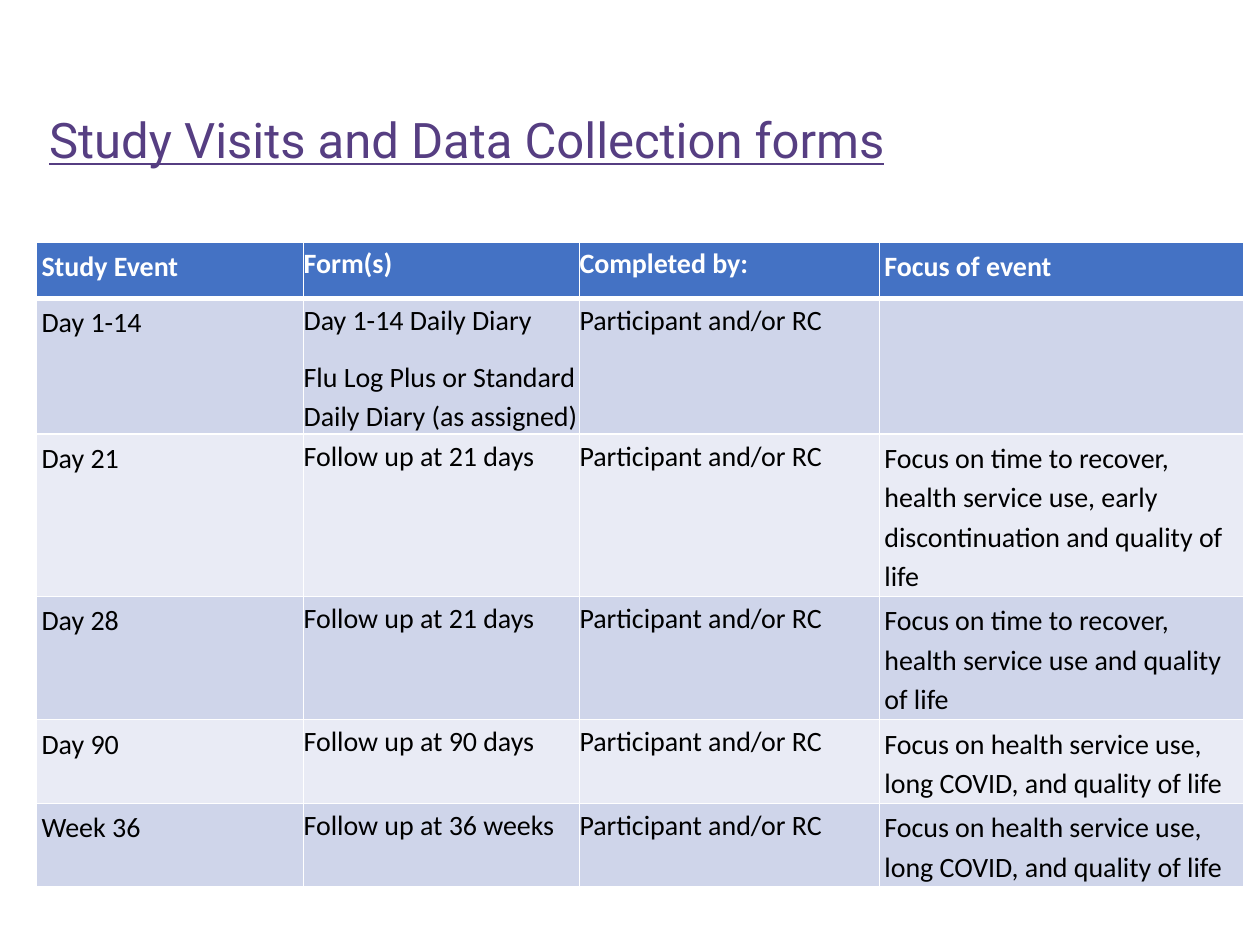
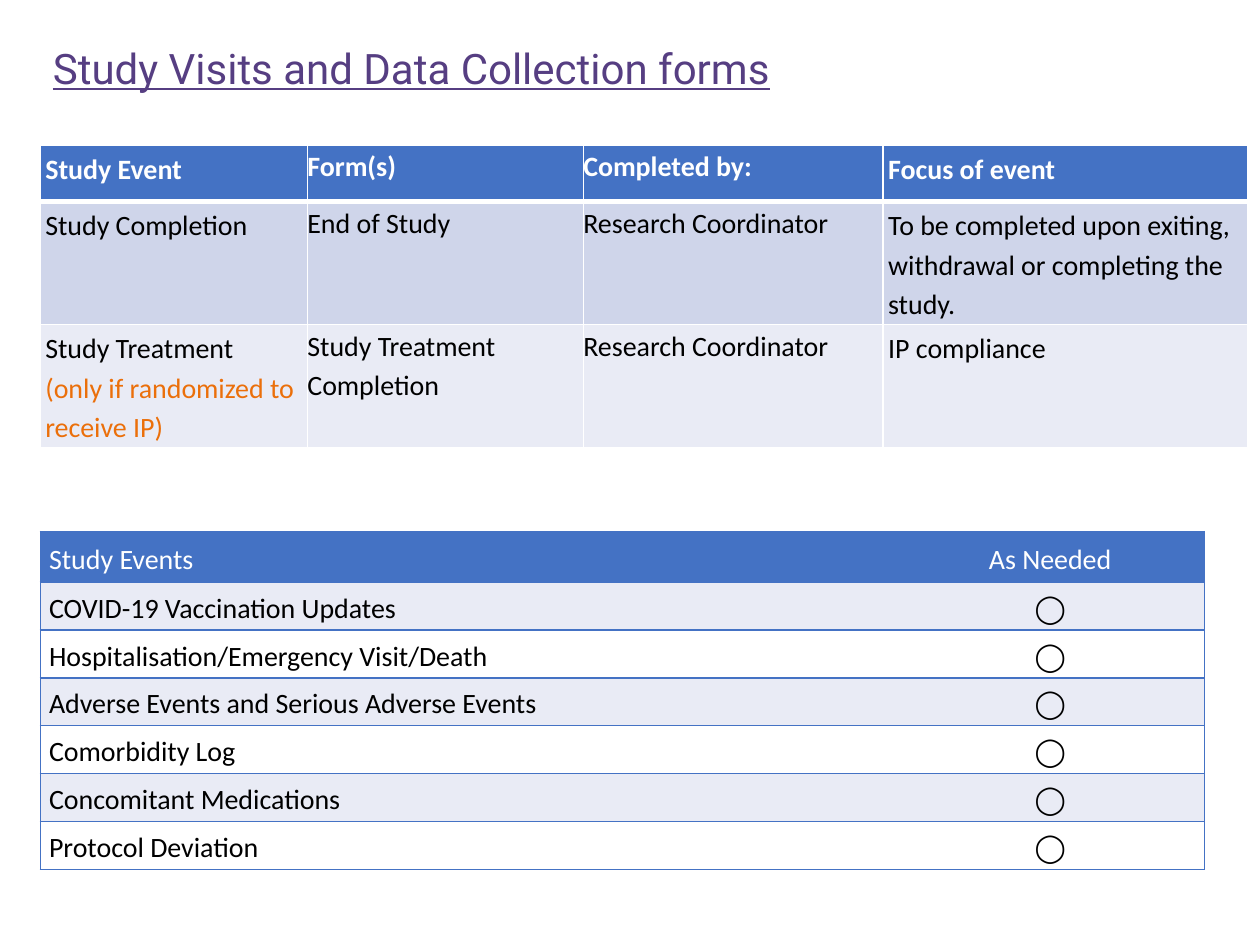
from dataclasses import dataclass

from lxml.etree import SubElement
from pptx import Presentation
from pptx.dml.color import RGBColor
from pptx.enum.text import MSO_ANCHOR, MSO_AUTO_SIZE, PP_ALIGN
from pptx.oxml.ns import qn
from pptx.util import Inches, Pt

# Shared colours and fonts
PURPLE = RGBColor(0x56, 0x3E, 0x82)
BLUE = RGBColor(0x44, 0x72, 0xC4)
BAND_DARK = RGBColor(0xCF, 0xD5, 0xEA)
BAND_LIGHT = RGBColor(0xE9, 0xEB, 0xF5)
ORANGE = RGBColor(0xEB, 0x6F, 0x0A)
WHITE = RGBColor(0xFF, 0xFF, 0xFF)
BLACK = RGBColor(0x00, 0x00, 0x00)
TITLE_FONT = "Roboto"
BODY_FONT = "Calibri"

TITLE = "Study Visits and Data Collection forms"
VISIT_HEADER = ("Study Event", "Form(s)", "Completed by:", "Focus of event")
VISIT_COLUMNS = (2.12, 2.19, 2.38, 2.89)
EITHER = "Participant and/or RC"
COORDINATOR = "Research Coordinator"
LONG_TERM_FOCUS = "Focus on health service use, long COVID, and quality of life"

FOLLOW_UP_VISITS = (
    ("Day 1-14",
     "Day 1-14 Daily Diary\nFlu Log Plus or Standard Daily Diary (as assigned)",
     EITHER, ""),
    ("Day 21", "Follow up at 21 days", EITHER,
     "Focus on time to recover, health service use, early "
     "discontinuation and quality of life"),
    ("Day 28", "Follow up at 21 days", EITHER,
     "Focus on time to recover, health service use and quality of life"),
    ("Day 90", "Follow up at 90 days", EITHER, LONG_TERM_FOCUS),
    ("Week 36", "Follow up at 36 weeks", EITHER, LONG_TERM_FOCUS),
)
CLOSING_VISITS = (
    ("Study Completion", "End of Study", COORDINATOR,
     "To be completed upon exiting, withdrawal or completing the study."),
    ("Study Treatment\v(only if randomized to receive IP)",
     "Study Treatment Completion", COORDINATOR, "IP compliance"),
)
AS_NEEDED_EVENTS = (
    "COVID-19 Vaccination Updates",
    "Hospitalisation/Emergency Visit/Death",
    "Adverse Events and Serious Adverse Events",
    "Comorbidity Log",
    "Concomitant Medications",
    "Protocol Deviation",
)


@dataclass(frozen=True)
class TableStyle:
    columns: tuple[float, ...]
    margins: tuple[tuple[float, float], ...]  # side and top inset per column
    alignments: tuple[PP_ALIGN, ...]
    bands: tuple[RGBColor, RGBColor]
    line_color: RGBColor
    header_rule: float
    inner_verticals: bool
    header_bold: bool
    anchor: MSO_ANCHOR
    space_after: float


VISIT_STYLE = TableStyle(
    VISIT_COLUMNS, ((0.04, 0.02), (0, 0), (0, 0), (0.04, 0.02)),
    (PP_ALIGN.LEFT,) * 4, (BAND_DARK, BAND_LIGHT), WHITE,
    header_rule=3, inner_verticals=True, header_bold=True,
    anchor=MSO_ANCHOR.TOP, space_after=10)
CHECKLIST_STYLE = TableStyle(
    (6.79, 2.45), ((0.07, 0),) * 2, (PP_ALIGN.LEFT, PP_ALIGN.CENTER),
    (BAND_LIGHT, WHITE), BLUE,
    header_rule=1, inner_verticals=False, header_bold=False,
    anchor=MSO_ANCHOR.MIDDLE, space_after=1)


def write_text(frame, text: str, *, font: str = BODY_FONT, size: float = 16,
               color: RGBColor = BLACK, note_color: RGBColor = ORANGE,
               bold: bool = False, underline: bool = False,
               align: PP_ALIGN = PP_ALIGN.LEFT, line_spacing: float = 1.15,
               space_after: float = 0) -> None:
    """Newlines part paragraphs; a vertical tab starts a note on a new line."""
    for index, content in enumerate(text.split("\n")):
        paragraph = frame.add_paragraph() if index else frame.paragraphs[0]
        paragraph.alignment = align
        paragraph.line_spacing = line_spacing
        paragraph.space_before = Pt(0)
        paragraph.space_after = Pt(space_after)
        for part_index, part in enumerate(content.split("\v")):
            if part_index:
                paragraph.add_line_break()
            run = paragraph.add_run()
            run.text = part
            run.font.name = font
            run.font.size = Pt(size)
            run.font.bold = bold
            run.font.underline = underline
            run.font.color.rgb = note_color if part_index else color


def set_borders(cell, color: RGBColor, widths: dict[str, float]) -> None:
    """Draw the four sides; a width of zero hides a side."""
    properties = cell._tc.get_or_add_tcPr()
    for index, side in enumerate(("L", "R", "T", "B")):
        line = SubElement(properties, qn(f"a:ln{side}"), w=str(Pt(widths[side])))
        if widths[side]:
            fill = SubElement(line, qn("a:solidFill"))
            SubElement(fill, qn("a:srgbClr"), val=str(color))
        else:
            SubElement(line, qn("a:noFill"))
        properties.insert(index, line)


def add_title(slide, left: float, top: float, width: float, size: float) -> None:
    title = slide.shapes.title
    title.left, title.top = Inches(left), Inches(top)
    title.width, title.height = Inches(width), Inches(0.67)
    frame = title.text_frame
    frame.auto_size = MSO_AUTO_SIZE.NONE
    frame.word_wrap = True
    frame.vertical_anchor = MSO_ANCHOR.MIDDLE
    write_text(frame, TITLE, font=TITLE_FONT, size=size, color=PURPLE,
               underline=True, line_spacing=0.9)


def add_styled_table(slide, left: float, top: float, rows: tuple,
                     heights: tuple[float, ...], style: TableStyle) -> None:
    last_column = len(style.columns) - 1
    table = slide.shapes.add_table(
        len(rows), len(style.columns), Inches(left), Inches(top),
        Inches(sum(style.columns)), Inches(sum(heights))).table
    for column, width in zip(table.columns, style.columns):
        column.width = Inches(width)
    for row_index, (row, height) in enumerate(zip(rows, heights)):
        table.rows[row_index].height = Inches(height)
        is_header = row_index == 0
        for column_index, text in enumerate(row):
            cell = table.cell(row_index, column_index)
            side, edge = style.margins[column_index]
            cell.margin_left = cell.margin_right = Inches(side)
            cell.margin_top = cell.margin_bottom = Inches(edge)
            cell.vertical_anchor = style.anchor
            cell.fill.solid()
            cell.fill.fore_color.rgb = (
                BLUE if is_header else style.bands[(row_index - 1) % 2])
            set_borders(cell, style.line_color, {
                "L": int(style.inner_verticals or column_index == 0),
                "R": int(style.inner_verticals or column_index == last_column),
                "T": style.header_rule if row_index == 1 else 1,
                "B": style.header_rule if is_header else 1})
            if text:
                write_text(cell.text_frame, text,
                           color=WHITE if is_header else BLACK,
                           bold=is_header and style.header_bold,
                           align=style.alignments[column_index],
                           space_after=style.space_after)


def main() -> None:
    presentation = Presentation()
    presentation.slide_width, presentation.slide_height = Inches(10), Inches(7.5)
    title_only = presentation.slide_layouts[5]

    # Follow-up visits
    slide = presentation.slides.add_slide(title_only)
    add_title(slide, 0.29, 0.8, 7.59, 28)
    add_styled_table(slide, 0.29, 1.92, (VISIT_HEADER, *FOLLOW_UP_VISITS),
                     (0.45, 1.07, 1.29, 0.97, 0.66, 0.66), VISIT_STYLE)

    # Closing visits and events recorded as needed
    slide = presentation.slides.add_slide(title_only)
    add_title(slide, 0.32, 0.23, 7.51, 24)
    add_styled_table(slide, 0.32, 1.15, (VISIT_HEADER, *CLOSING_VISITS),
                     (0.45, 0.97, 0.97), VISIT_STYLE)
    checklist = (("Study Events", "As Needed"),
                 *((event, "◯") for event in AS_NEEDED_EVENTS))
    add_styled_table(slide, 0.32, 4.22, checklist,
                     (0.4, *(0.38,) * len(AS_NEEDED_EVENTS)), CHECKLIST_STYLE)

    presentation.save("out.pptx")


if __name__ == "__main__":
    main()
